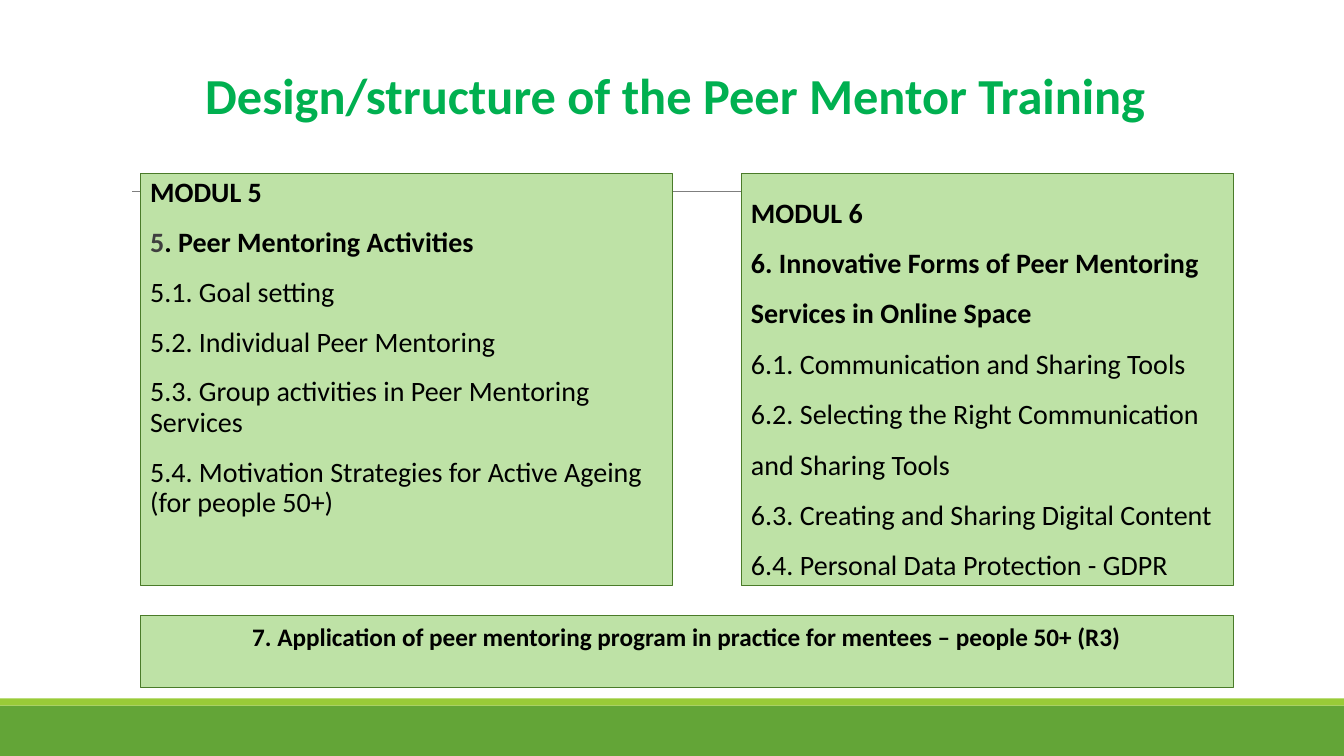
from lxml.etree import SubElement
from pptx import Presentation
from pptx.dml.color import RGBColor
from pptx.enum.shapes import MSO_CONNECTOR, MSO_SHAPE
from pptx.enum.text import MSO_ANCHOR, PP_ALIGN
from pptx.oxml.ns import qn
from pptx.util import Pt

WIDE, HIGH = 1333, 750
LEFT, TOP, TALL = 139, 172, 409
BLACK, GREY, PALE, EDGE = "000000", "3F3F3F", "BEE2A6", "4A7B29"


def px(num):
    return num * 9144


def tint(code):
    return RGBColor.from_string(code)


def bold(text, color=BLACK):
    return text, True, color


def plain(text):
    return text, False, BLACK


class Deck:
    """Holds the style and the current slide, and draws each kind of element."""

    font = "Calibri"

    def __init__(self):
        self.show = Presentation()
        self.show.slide_width, self.show.slide_height = px(WIDE), px(HIGH)
        self.slide = self.show.slides.add_slide(self.show.slide_layouts[6])

    def rect(self, *box, fill, edge=None):
        shape = self.slide.shapes.add_shape(MSO_SHAPE.RECTANGLE, *map(px, box))
        shape.shadow.inherit = False
        shape.fill.solid()
        shape.fill.fore_color.rgb = tint(fill)
        if edge:
            shape.line.color.rgb = tint(edge)
            shape.line.width = Pt(0.75)
        else:
            shape.line.fill.background()
        return shape

    def rule(self, start, end, level, color):
        line = self.slide.shapes.add_connector(
            MSO_CONNECTOR.STRAIGHT, px(start), px(level), px(end), px(level))
        line.line.color.rgb = tint(color)
        line.line.width = Pt(0.75)
        SubElement(line._element.spPr, qn("a:effectLst"))

    def label(self, *box):
        return self.slide.shapes.add_textbox(*map(px, box))

    def words(self, shape, paras, size, anchor=MSO_ANCHOR.TOP, **form):
        frame = shape.text_frame
        frame.word_wrap, frame.vertical_anchor = True, anchor
        form = {"alignment": PP_ALIGN.LEFT, **form}
        for rank, runs in enumerate(paras):
            para = frame.add_paragraph() if rank else frame.paragraphs[0]
            for name, value in form.items():
                if rank or name != "space_before":
                    setattr(para, name, value)
            for text, heavy, color in runs:
                run = para.add_run()
                run.text = text
                style = {"name": self.font, "size": Pt(size), "bold": heavy}
                for name, value in style.items():
                    setattr(run.font, name, value)
                run.font.color.rgb = tint(color)

    def panel(self, *box, paras, size=20, **form):
        self.words(self.rect(*box, fill=PALE, edge=EDGE), paras, size, **form)

    def save(self):
        self.show.save("out.pptx")


def main():
    deck = Deck()
    deck.rect(0, 700, WIDE, 50, fill="63A537")
    deck.rect(0, 693, WIDE, 7, fill="99CB38")
    deck.rule(131, 1221, 190, "7F7F7F")
    title = [[bold("Design/structure of the Peer Mentor Training", "00B050")]]
    deck.words(deck.label(41, 31, 1258, 98), title, 36, MSO_ANCHOR.BOTTOM,
               alignment=PP_ALIGN.CENTER, line_spacing=0.85)

    five = [
        [bold("MODUL 5")],
        [bold("5", GREY), bold(". Peer Mentoring Activities")],
        [plain("5.1. Goal setting")],
        [plain("5.2. Individual Peer Mentoring")],
        [plain("5.3. Group activities in Peer Mentoring Services")],
        [plain("5.4. Motivation Strategies for Active Ageing (for people 50+)")],
    ]
    six = [
        [bold("MODUL 6")],
        [bold("6. Innovative Forms of Peer Mentoring Services in Online Space")],
        [plain("6.1. Communication and Sharing Tools")],
        [plain("6.2. Selecting the Right Communication and Sharing Tools")],
        [plain("6.3. Creating and Sharing Digital Content")],
        [plain("6.4. Personal Data Protection - GDPR")],
    ]
    seven = [[bold("7. Application of peer mentoring program in practice "
                   "for mentees – people 50+ (R3)")]]
    deck.panel(LEFT, TOP, 528, TALL, paras=five,
               line_spacing=0.9, space_before=Pt(14))
    deck.panel(735, TOP, 488, TALL, paras=six, line_spacing=1.5)
    deck.panel(LEFT, 611, 1084, 71, paras=seven, size=18,
               alignment=PP_ALIGN.CENTER)
    deck.save()


if __name__ == "__main__":
    main()
